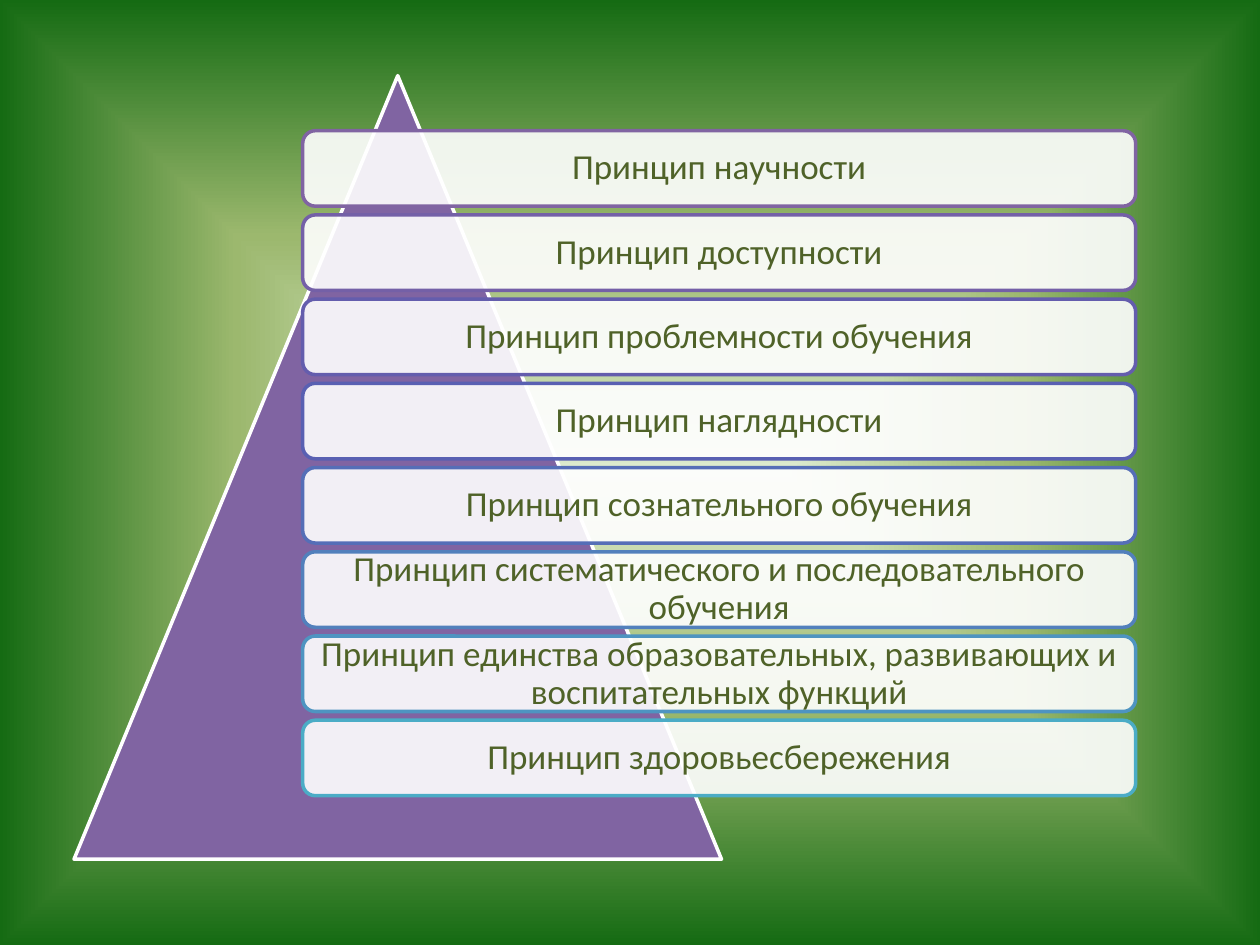
from lxml.etree import SubElement
from pptx import Presentation
from pptx.dml.color import RGBColor
from pptx.enum.shapes import MSO_SHAPE
from pptx.enum.text import MSO_ANCHOR, PP_ALIGN
from pptx.oxml.ns import qn
from pptx.util import Pt

WHITE = RGBColor(0xFF, 0xFF, 0xFF)
PURPLE = RGBColor(0x80, 0x64, 0xA2)
OLIVE = RGBColor(0x4F, 0x62, 0x28)
STOPS = [
    (0, RGBColor(0xDD, 0xEB, 0xCF)),
    (50, RGBColor(0x9C, 0xB8, 0x6E)),
    (100, RGBColor(0x15, 0x6B, 0x13)),
]
RULES = [
    ("Принцип научности", PURPLE),
    ("Принцип доступности", RGBColor(0x74, 0x60, 0xA7)),
    ("Принцип проблемности обучения", RGBColor(0x64, 0x5D, 0xAD)),
    ("Принцип наглядности", RGBColor(0x59, 0x60, 0xB2)),
    ("Принцип сознательного обучения", RGBColor(0x55, 0x6E, 0xB7)),
    ("Принцип систематического и последовательного обучения",
     RGBColor(0x52, 0x80, 0xBC)),
    ("Принцип единства образовательных, развивающих и воспитательных функций",
     RGBColor(0x4E, 0x94, 0xC1)),
    ("Принцип здоровьесбережения", RGBColor(0x4B, 0xAC, 0xC6)),
]


def paint_back(slide):
    slide.background.fill.gradient()
    grad = slide.element.find(".//" + qn("a:gradFill"))
    for child in list(grad):
        grad.remove(child)
    stops = SubElement(grad, qn("a:gsLst"))
    for place, color in STOPS:
        stop = SubElement(stops, qn("a:gs"), pos=str(place * 1000))
        SubElement(stop, qn("a:srgbClr"), val=str(color))
    route = SubElement(grad, qn("a:path"), path="shape")
    SubElement(route, qn("a:fillToRect"),
               dict.fromkeys("ltrb", "50000"))


def add_form(slide, kind, box, fill, line):
    form = slide.shapes.add_shape(kind, *map(Pt, box))
    form.shadow.inherit = False
    form.fill.solid()
    form.fill.fore_color.rgb = fill
    form.line.color.rgb = line
    form.line.width = Pt(2)
    return form


def add_peak(slide, box):
    add_form(slide, MSO_SHAPE.ISOSCELES_TRIANGLE, box, PURPLE, WHITE)


def add_bar(slide, box, text, color):
    bar = add_form(slide, MSO_SHAPE.ROUNDED_RECTANGLE, box, WHITE, color)
    tint = bar.element.spPr.find(qn("a:solidFill"))[0]
    SubElement(tint, qn("a:alpha"), val="90000")
    frame = bar.text_frame
    frame.word_wrap = True
    frame.vertical_anchor = MSO_ANCHOR.MIDDLE
    frame.margin_left = frame.margin_right = Pt(6)
    frame.margin_top = frame.margin_bottom = Pt(6)
    para = frame.paragraphs[0]
    para.text = text
    para.alignment = PP_ALIGN.CENTER
    para.line_spacing = 0.9
    para.font.name = "Calibri"
    para.font.size = Pt(20)
    para.font.color.rgb = OLIVE


def add_list(slide, box, gap):
    left, top, width, height = box
    step = (height + gap) / len(RULES)
    for row, (text, color) in enumerate(RULES):
        place = (left, top + row * step, width, step - gap)
        add_bar(slide, place, text, color)


def main():
    deck = Presentation()
    deck.slide_width, deck.slide_height = Pt(720), Pt(540)
    slide = deck.slides.add_slide(deck.slide_layouts[6])
    paint_back(slide)
    add_peak(slide, (42.3, 43.2, 370, 447.8))
    add_list(slide, (173, 74.7, 476, 380), 5)
    deck.save("out.pptx")


if __name__ == "__main__":
    main()
